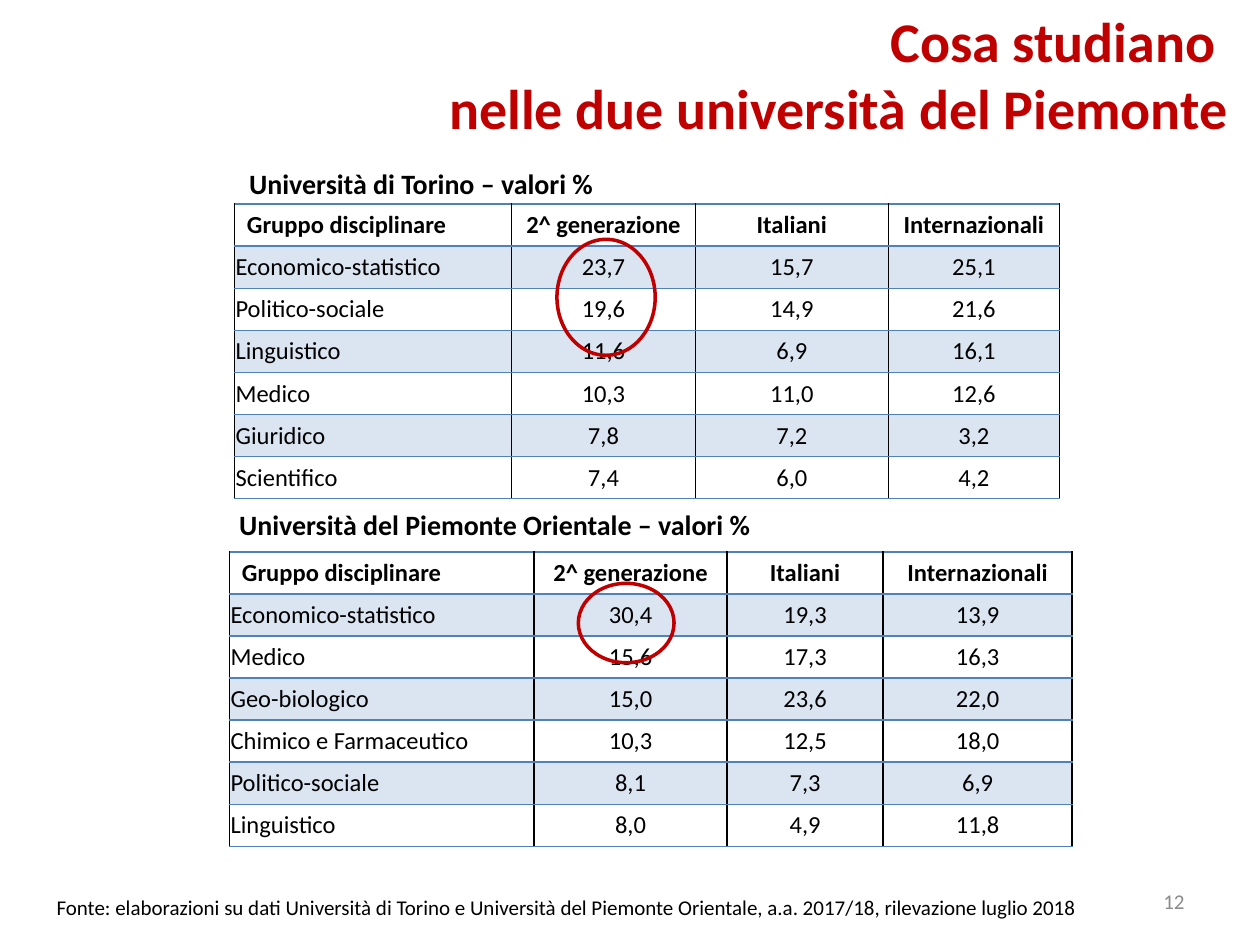
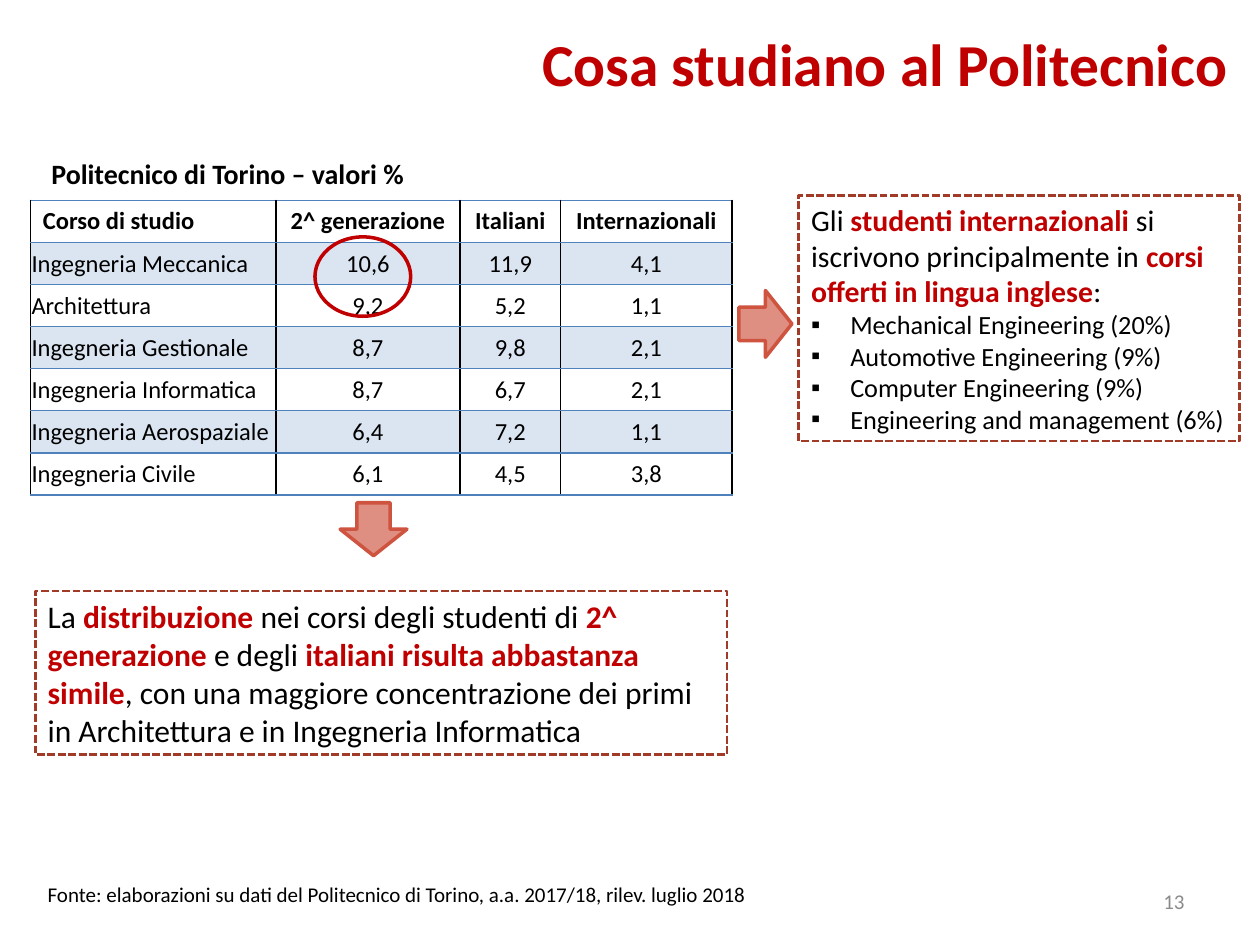
from lxml import etree
from pptx import Presentation
from pptx import util as u
from pptx.dml.color import RGBColor
from pptx.enum import dml, shapes, text
from pptx.oxml import ns

WIDTH, HEIGHT = u.Inches(10), u.Inches(7.5)
FONT = "Calibri"
RED, BLACK, GREY, BLUE = "C00000", "000000", "8B8B8B", "4F81BD"
BRICK, CORAL = "A23A28", "CF543F"
LEFT, CENTER, RIGHT = text.PP_ALIGN.LEFT, text.PP_ALIGN.CENTER, text.PP_ALIGN.RIGHT
TOP, MIDDLE = text.MSO_ANCHOR.TOP, text.MSO_ANCHOR.MIDDLE

# All positions and sizes are percentages of the slide's width and height.
HEADER_ROW, BODY_ROW = 4, 3.47
TITLE_SIZE = (90, 12.13)
NUMBER_BOX = (71.7, 92.67, 23.3, 5.33)
HEADINGS = ["2^ generazione", "Italiani", "Internazionali"]

SLIDES = [
    {
        "number": "12",
        "title": ["Cosa studiano ", "nelle due università del Piemonte"],
        "title_at": (8.5, 1.73),
        "title_points": 32,
        "tables": [
            {
                "caption": "Università di Torino – valori %",
                "caption_box": (18.8, 16.93, 29.3, 4.8),
                "at": (18.6, 21.6),
                "columns": [22, 14.6, 15.3, 13.6],
                "rows": [
                    ["Gruppo disciplinare", *HEADINGS],
                    ["Economico-statistico", "23,7", "15,7", "25,1"],
                    ["Politico-sociale", "19,6", "14,9", "21,6"],
                    ["Linguistico", "11,6", "6,9", "16,1"],
                    ["Medico", "10,3", "11,0", "12,6"],
                    ["Giuridico", "7,8", "7,2", "3,2"],
                    ["Scientifico", "7,4", "6,0", "4,2"],
                ],
                "ring": (44.2, 25.33, 7.8, 12.27),
            },
            {
                "caption": "Università del Piemonte Orientale – valori %",
                "caption_box": (18, 53.07, 42.6, 4.8),
                "at": (18.2, 58.4),
                "columns": [24.2, 15.3, 12.4, 15],
                "rows": [
                    ["Gruppo disciplinare", *HEADINGS],
                    ["Economico-statistico", "30,4", "19,3", "13,9"],
                    ["Medico", "15,6", "17,3", "16,3"],
                    ["Geo-biologico", "15,0", "23,6", "22,0"],
                    ["Chimico e Farmaceutico", "10,3", "12,5", "18,0"],
                    ["Politico-sociale", "8,1", "7,3", "6,9"],
                    ["Linguistico", "8,0", "4,9", "11,8"],
                ],
                "ring": (45.9, 61.73, 7.6, 8.4),
            },
        ],
        "notes": [],
        "arrows": [],
        "source": "Fonte: elaborazioni su dati Università di Torino e Università del Piemonte "
                  "Orientale, a.a. 2017/18, rilevazione luglio 2018",
        "source_box": (3.5, 94, 85.8, 4),
    },
    {
        "number": "13",
        "title": ["Cosa studiano al Politecnico"],
        "title_at": (8.4, 0.53),
        "title_points": 34,
        "tables": [
            {
                "caption": "Politecnico di Torino – valori %",
                "caption_box": (3.1, 15.87, 30, 4.8),
                "at": (2.4, 21.2),
                "columns": [19.5, 14.6, 8, 13.6],
                "rows": [
                    ["Corso di studio", *HEADINGS],
                    ["Ingegneria Meccanica", "10,6", "11,9", "4,1"],
                    ["Architettura", "9,2", "5,2", "1,1"],
                    ["Ingegneria Gestionale", "8,7", "9,8", "2,1"],
                    ["Ingegneria Informatica", "8,7", "6,7", "2,1"],
                    ["Ingegneria Aerospaziale", "6,4", "7,2", "1,1"],
                    ["Ingegneria Civile", "6,1", "4,5", "3,8"],
                ],
                "ring": (25, 25.07, 7.6, 8.4),
            },
        ],
        "notes": [
            {
                "box": (63.4, 20.67, 35, 26),
                "points": 17,
                "text": "Gli *studenti internazionali *si iscrivono principalmente in "
                        "*corsi offerti in lingua inglese*:",
                "bullets": [
                    "Mechanical Engineering (20%)",
                    "Automotive Engineering (9%)",
                    "Computer Engineering (9%)",
                    "Engineering and management (6%)",
                ],
            },
            {
                "box": (2.8, 62.53, 54.9, 17.33),
                "points": 18,
                "text": "La *distribuzione* nei corsi degli studenti di *2^ generazione *e degli "
                        "*italiani risulta abbastanza simile*, con una maggiore concentrazione "
                        "dei primi in Architettura e in Ingegneria Informatica",
                "bullets": [],
            },
        ],
        "arrows": [((27, 53.2, 5.3, 5.6), 0), ((58.1, 31.47, 5.3, 5.6), 270)],
        "source": "Fonte: elaborazioni su dati del Politecnico di Torino, a.a. 2017/18, "
                  "rilev. luglio 2018",
        "source_box": (2.8, 92.67, 64.9, 4),
    },
]


def color(value):
    return RGBColor.from_string(value)


def across(share):
    return round(WIDTH * share / 100)


def down(share):
    return round(HEIGHT * share / 100)


def place(box):
    left, top, width, height = box
    return across(left), down(top), across(width), down(height)


def set_all(target, values):
    for name, value in values.items():
        setattr(target, name, value)


def set_alpha(fill_parent, percent):
    rgb = fill_parent.find(ns.qn("a:solidFill")).find(ns.qn("a:srgbClr"))
    etree.SubElement(rgb, ns.qn("a:alpha"), val=str(percent * 1000))


def write(paragraph, marked_text, points, ink=BLACK, bold=False, align=LEFT):
    paragraph.alignment = align
    for index, part in enumerate(marked_text.split("*")):
        if part:
            marked = index % 2 == 1
            run = paragraph.add_run()
            run.text = part
            set_all(run.font, {"name": FONT, "size": u.Pt(points), "bold": bold or marked})
            run.font.color.rgb = color(RED if marked else ink)


def add_text(slide, box, lines, points, ink=BLACK, bold=False, align=LEFT, anchor=TOP, wrap=True):
    frame = slide.shapes.add_textbox(*place(box)).text_frame
    set_all(frame, {"word_wrap": wrap, "vertical_anchor": anchor})
    for index, line in enumerate(lines):
        paragraph = frame.add_paragraph() if index else frame.paragraphs[0]
        write(paragraph, line, points, ink, bold, align)


def add_outline(slide, kind, box, ink, points):
    shape = slide.shapes.add_shape(kind, *place(box))
    shape.shadow.inherit = False
    shape.fill.background()
    shape.line.color.rgb = color(ink)
    shape.line.width = u.Pt(points)
    return shape


def add_borders(cell):
    properties = cell._tc.get_or_add_tcPr()
    for side, ink in (("L", BLACK), ("R", BLACK), ("T", BLUE), ("B", BLUE)):
        line = etree.SubElement(properties, ns.qn(f"a:ln{side}"), w=str(u.Pt(0.96)))
        fill = etree.SubElement(line, ns.qn("a:solidFill"))
        etree.SubElement(fill, ns.qn("a:srgbClr"), val=ink)


def fill_cell(cell, value, row, column):
    if row:
        set_all(cell, {"margin_left": u.Inches(0.01), "margin_right": u.Inches(0.01)})
    write(cell.text_frame.paragraphs[0], value, 14, bold=row == 0, align=CENTER if column else LEFT)
    add_borders(cell)
    if row % 2:
        cell.fill.solid()
        cell.fill.fore_color.rgb = color(BLUE)
        set_alpha(cell._tc.tcPr, 20)
    else:
        cell.fill.background()


def add_data_table(slide, data):
    rows, columns = data["rows"], data["columns"]
    heights = [HEADER_ROW] + [BODY_ROW] * (len(rows) - 1)
    box = (*data["at"], sum(columns), sum(heights))
    table = slide.shapes.add_table(len(rows), len(columns), *place(box)).table
    set_all(table, {"first_row": False, "horz_banding": False})
    for column, share in zip(table.columns, columns):
        column.width = across(share)
    for row, share in zip(table.rows, heights):
        row.height = down(share)
    for row, values in enumerate(rows):
        for column, value in enumerate(values):
            fill_cell(table.cell(row, column), value, row, column)


def add_bullet(paragraph, line):
    write(paragraph, line, 15)
    properties = paragraph._p.get_or_add_pPr()
    indent = u.Inches(0.31)
    properties.set("marL", str(indent))
    properties.set("indent", str(-indent))
    etree.SubElement(properties, ns.qn("a:buFont"), typeface="Arial")
    etree.SubElement(properties, ns.qn("a:buChar"), char="▪")


def add_note(slide, note):
    shape = add_outline(slide, shapes.MSO_SHAPE.RECTANGLE, note["box"], BRICK, 1.5)
    shape.line.dash_style = dml.MSO_LINE.SQUARE_DOT
    frame = shape.text_frame
    set_all(frame, {"word_wrap": True, "vertical_anchor": TOP})
    write(frame.paragraphs[0], note["text"], note["points"])
    for line in note["bullets"]:
        add_bullet(frame.add_paragraph(), line)


def add_arrow(slide, box, rotation):
    arrow = add_outline(slide, shapes.MSO_SHAPE.DOWN_ARROW, box, CORAL, 2)
    arrow.rotation = rotation
    arrow.fill.solid()
    arrow.fill.fore_color.rgb = color(CORAL)
    set_alpha(arrow._element.spPr, 65)


def build_slide(presentation, content):
    slide = presentation.slides.add_slide(presentation.slide_layouts[6])
    add_text(slide, (*content["title_at"], *TITLE_SIZE), content["title"],
             content["title_points"], RED, True, RIGHT, MIDDLE)
    for data in content["tables"]:
        add_data_table(slide, data)
        add_text(slide, data["caption_box"], [data["caption"]], 16, bold=True, wrap=False)
    for note in content["notes"]:
        add_note(slide, note)
    for box, rotation in content["arrows"]:
        add_arrow(slide, box, rotation)
    add_text(slide, content["source_box"], [content["source"]], 12)
    add_text(slide, NUMBER_BOX, [content["number"]], 12, GREY, align=RIGHT, anchor=MIDDLE)
    for data in content["tables"]:
        add_outline(slide, shapes.MSO_SHAPE.OVAL, data["ring"], RED, 2)


def main():
    presentation = Presentation()
    set_all(presentation, {"slide_width": WIDTH, "slide_height": HEIGHT})
    for content in SLIDES:
        build_slide(presentation, content)
    presentation.save("out.pptx")


if __name__ == "__main__":
    main()
